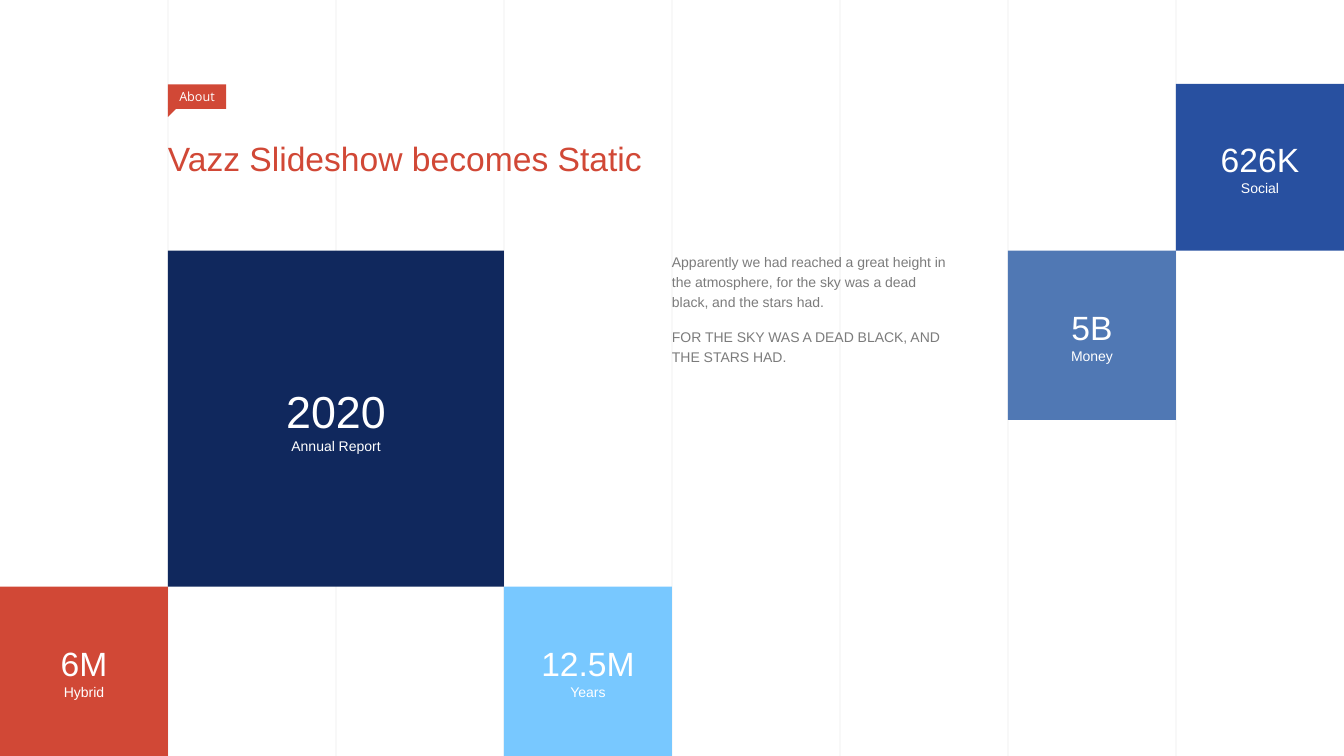
from lxml import etree
from pptx import Presentation
from pptx.dml.color import RGBColor
from pptx.enum.shapes import MSO_CONNECTOR, MSO_SHAPE
from pptx.enum.text import MSO_ANCHOR, MSO_AUTO_SIZE, PP_ALIGN
from pptx.oxml.ns import qn
from pptx.util import Pt

RED = RGBColor(0xD1, 0x48, 0x36)
NAVY = RGBColor(0x10, 0x28, 0x5D)
BLUE = RGBColor(0x28, 0x50, 0xA0)
STEEL = RGBColor(0x50, 0x78, 0xB4)
SKY = RGBColor(0x78, 0xC8, 0xFF)
GREY = RGBColor(0x44, 0x44, 0x44)
WHITE = RGBColor(0xFF, 0xFF, 0xFF)

RECT, TRIANGLE = MSO_SHAPE.RECTANGLE, MSO_SHAPE.RIGHT_TRIANGLE
STRAIGHT = MSO_CONNECTOR.STRAIGHT
LEFT, CENTER = PP_ALIGN.LEFT, PP_ALIGN.CENTER
TOP, MIDDLE = MSO_ANCHOR.TOP, MSO_ANCHOR.MIDDLE
NO_AUTOFIT = MSO_AUTO_SIZE.NONE

W, H = 960, 540
COLUMNS = 8
COL = W / COLUMNS

# Column, top, width, height, fill, figure, figure size, label
TILES = [
    (0, 419, COL, 121, RED, "6M", 24, "Hybrid"),
    (3, 419, COL, 121, SKY, "12.5M", 24, "Years"),
    (1, 179, 2 * COL, 240, NAVY, "2020", 32, "Annual Report"),
    (6, 179, COL, 121, STEEL, "5B", 24, "Money"),
    (7, 60, COL, 119, BLUE, "626K", 24, "Social"),
]

# Top, width, height, text
BODY = [
    (232, 203, 29, "FOR THE SKY WAS A DEAD BLACK, AND THE STARS HAD."),
    (178.75, 196.5, 42.5,
     "Apparently we had reached a great height in the atmosphere, "
     "for the sky was a dead black, and the stars had."),
]


def set_alpha(element, percent):
    for color in element.iter(qn("a:srgbClr")):
        etree.SubElement(color, qn("a:alpha")).set("val", str(percent * 1000))


def no_insets(tf):
    tf.margin_left = tf.margin_right = tf.margin_top = tf.margin_bottom = 0
    tf.word_wrap = True


def style(p, size, color, font="Arial", align=LEFT):
    p.alignment = align
    p.font.size = Pt(size)
    p.font.name = font
    p.font.color.rgb = color


def add_block(shapes, kind, x, y, w, h, color):
    sp = shapes.add_shape(kind, Pt(x), Pt(y), Pt(w), Pt(h))
    sp.shadow.inherit = False
    sp.fill.solid()
    sp.fill.fore_color.rgb = color
    sp.line.fill.background()
    return sp


def add_grid(s, w, h):
    for i in range(1, COLUMNS):
        x = Pt(i * w / COLUMNS)
        line = s.shapes.add_connector(STRAIGHT, x, 0, x, Pt(h))
        line.line.width = Pt(0.5)
        line.line.color.rgb = GREY
        set_alpha(line.line._ln, 10)
        etree.SubElement(line._element.spPr, qn("a:effectLst"))


def add_title(s, x, y, w, h):
    title = s.shapes.title
    title.left, title.top, title.width, title.height = Pt(x), Pt(y), Pt(w), Pt(h)
    title._element.getparent().append(title._element)  # in front of the grid
    tf = title.text_frame
    no_insets(tf)
    tf.auto_size = NO_AUTOFIT
    tf.vertical_anchor = TOP
    tf.text = "Vazz Slideshow becomes Static"
    style(tf.paragraphs[0], 24, RED)


def add_tag(s, x, y, w, h, tail):
    shapes = s.shapes.add_group_shape().shapes
    label = add_block(shapes, RECT, x, y, w, h, RED)
    tf = label.text_frame
    tf.word_wrap = False
    tf.vertical_anchor = MIDDLE
    tf.text = "About"
    style(tf.paragraphs[0], 9, WHITE, "Open Sans", CENTER)
    corner = add_block(shapes, TRIANGLE, x, y + h, tail, tail, RED)
    corner._element.spPr.find(qn("a:xfrm")).set("flipV", "1")


def add_tile(s, x, y, w, h, color, figure, size, label):
    tf = add_block(s.shapes, RECT, x, y, w, h, color).text_frame
    tf.vertical_anchor = MIDDLE
    tf.text = f"{figure}\n{label}"
    for p, points in zip(tf.paragraphs, (size, 10)):
        style(p, points, WHITE, align=CENTER)


def add_body(s, x, y, w, h, text):
    tf = s.shapes.add_textbox(Pt(x), Pt(y), Pt(w), Pt(h)).text_frame
    no_insets(tf)
    tf.text = text
    p = tf.paragraphs[0]
    p.line_spacing = 1.2
    style(p, 10, GREY)
    set_alpha(p._p, 70)


def main():
    prs = Presentation()
    prs.slide_width, prs.slide_height = Pt(W), Pt(H)
    s = prs.slides.add_slide(prs.slide_layouts[5])

    # Background grid and heading
    add_grid(s, W, H)
    add_title(s, COL, 98.5, 720, 59)
    add_tag(s, COL, 60.25, 41.5, 17.5, 5.75)

    # Figure tiles
    for column, *tile in TILES:
        add_tile(s, column * COL, *tile)

    # Body text
    for y, w, h, text in BODY:
        add_body(s, 4 * COL, y, w, h, text)

    prs.save("out.pptx")


if __name__ == "__main__":
    main()
